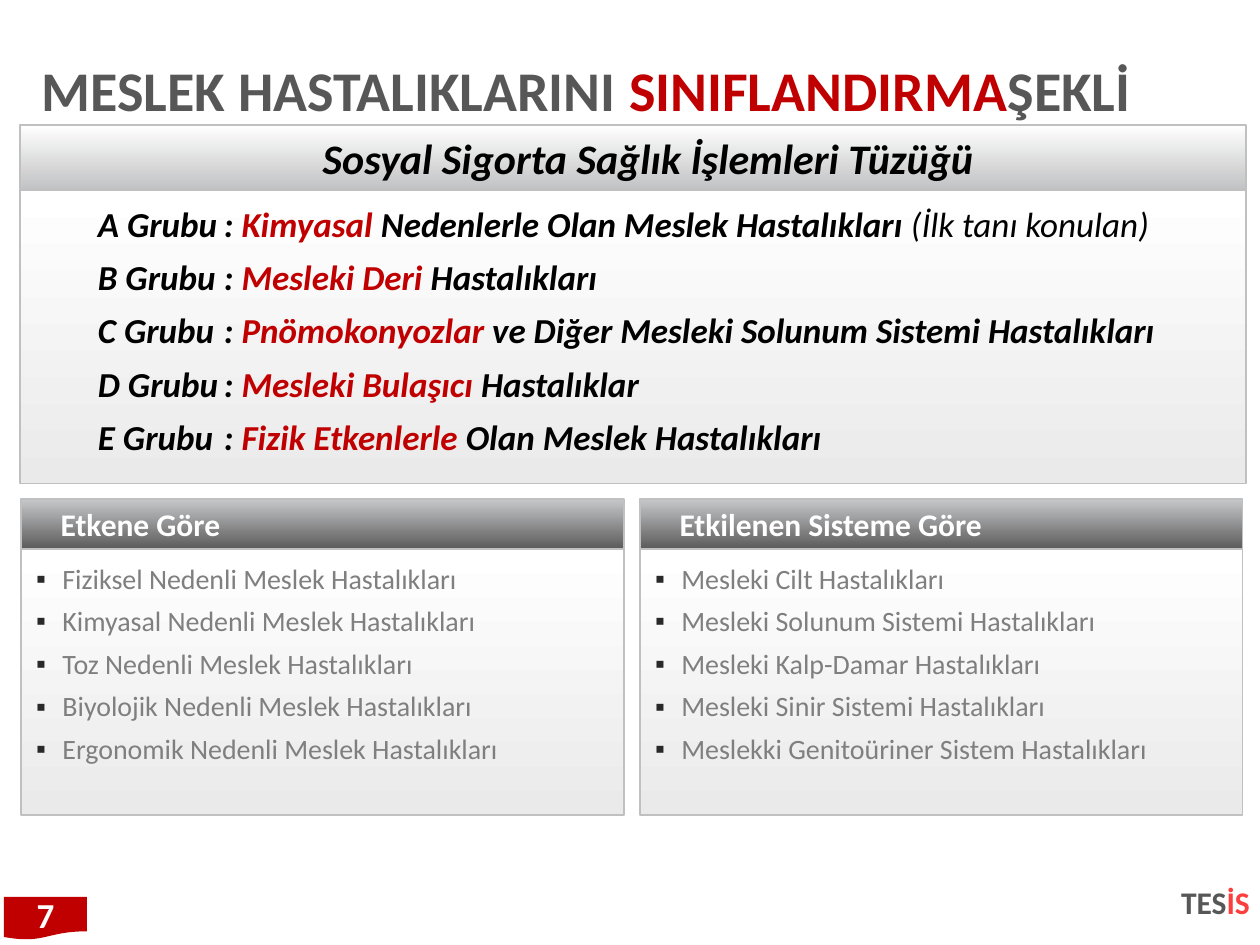
from dataclasses import dataclass

from lxml import etree
from pptx import Presentation
from pptx.dml.color import RGBColor
from pptx.enum.shapes import MSO_SHAPE
from pptx.enum.text import MSO_ANCHOR, MSO_AUTO_SIZE, PP_ALIGN
from pptx.oxml.ns import qn
from pptx.util import Pt

RECT, WAVE = MSO_SHAPE.RECTANGLE, MSO_SHAPE.FLOWCHART_DOCUMENT
TOP, MIDDLE = MSO_ANCHOR.TOP, MSO_ANCHOR.MIDDLE
LEFT, CENTER, RIGHT = PP_ALIGN.LEFT, PP_ALIGN.CENTER, PP_ALIGN.RIGHT
FIXED = MSO_AUTO_SIZE.NONE


@dataclass(frozen=True)
class Theme:
    font: str = "Calibri"
    dark: str = "575757"
    red: str = "C00000"
    coral: str = "FB3E3E"
    black: str = "000000"
    white: str = "FFFFFF"
    gray: str = "7F7F7F"
    mark: str = "292929"
    edge: str = "C0C0C0"
    steel: tuple = ("C6C7C8", "5C5C5D")
    silver: tuple = ("FFFFFF", "C1C2C3")
    pale: tuple = ("FFFFFF", "EAEAEA")
    title: int = 32
    head: int = 24
    group: int = 20
    label: int = 18
    item: int = 16


class Deck:
    """Holds the theme and the current slide, and draws each kind of element."""

    def __init__(self, theme):
        self.theme = theme
        self.file = Presentation()
        self.file.slide_width, self.file.slide_height = Pt(720), Pt(540)
        self.slide = self.file.slides.add_slide(self.file.slide_layouts[4])

    def holder(self, index, box):
        shape = self.slide.placeholders[index]
        shape.left, shape.top, shape.width, shape.height = map(Pt, box)
        return shape

    def shape(self, kind, box):
        shape = self.slide.shapes.add_shape(kind, *map(Pt, box))
        shape.shadow.inherit = False
        return shape

    def shade(self, shape, colors):
        shape.fill.gradient()
        shape.fill.gradient_angle = 270
        for stop, color in zip(shape.fill.gradient_stops, colors):
            stop.color.rgb = RGBColor.from_string(color)
        shape.line.color.rgb = RGBColor.from_string(self.theme.edge)
        shape.line.width = Pt(1)

    def text(self, shape, lines, size, color, bold=True, slant=False, align=LEFT,
             anchor=TOP, inset=(0, 0, 0, 0), space=1.0, after=0, indent=(0, 0),
             bullet=None):
        frame = shape.text_frame
        frame.word_wrap, frame.auto_size = True, FIXED
        frame.vertical_anchor = anchor
        (frame.margin_left, frame.margin_top,
         frame.margin_right, frame.margin_bottom) = map(Pt, inset)
        for n, line in enumerate(lines):
            para = frame.add_paragraph() if n else frame.paragraphs[0]
            para.alignment, para.line_spacing = align, space
            para.space_before, para.space_after = Pt(0), Pt(after)
            props = para._p.get_or_add_pPr()
            props.set("marL", str(Pt(indent[0])))
            props.set("indent", str(Pt(indent[1])))
            if bullet:
                tint = etree.SubElement(props, qn("a:buClr"))
                etree.SubElement(tint, qn("a:srgbClr"), val=self.theme.mark)
                etree.SubElement(props, qn("a:buChar"), char=bullet)
            font = para.font
            font.name, font.size = self.theme.font, Pt(size)
            font.bold, font.italic = bold, slant
            font.color.rgb = RGBColor.from_string(color)
            for words, *style in [(line,)] if isinstance(line, str) else line:
                run = para.add_run()
                run.text = words
                if style:
                    run.font.color.rgb = RGBColor.from_string(style[0])
                if style[1:]:
                    run.font.bold = style[1]

    def title(self, line):
        shape = self.holder(0, (23.8, 32.4, 671, 51))
        self.text(shape, [line], self.theme.title, self.theme.dark,
                  inset=(0, 3.6, 0, 3.6), space=0.9)

    def column(self, index, left, label, items):
        t, wide = self.theme, 344.2
        head = self.holder(index, (left, 285.3, wide, 28.3))
        self.shade(head, t.steel)
        self.text(head, [label], t.label, t.white, anchor=MIDDLE,
                  inset=(22.5, 0, 0, 0))
        body = self.holder(index + 1, (left, 313.6, wide, 152.2))
        self.shade(body, t.pale)
        self.text(body, items, t.item, t.gray, bold=False,
                  inset=(8.5, 8.5, 11.3, 5.7), space=0.95, after=6.1,
                  indent=(15, -15), bullet="▪")

    def panel(self, label, lines):
        t, left, wide = self.theme, 11.5, 700.6
        head = self.shape(RECT, (left, 71.3, wide, 37.4))
        self.shade(head, t.silver)
        self.text(head, [label], t.head, t.black, slant=True, align=CENTER,
                  anchor=MIDDLE, inset=(22.5, 0, 0, 0))
        body = self.shape(RECT, (left, 108.7, wide, 167.7))
        self.shade(body, t.pale)
        self.text(body, lines, t.group, t.black, slant=True,
                  inset=(8.5, 8.5, 11.3, 5.7), space=0.95, after=7.7,
                  indent=(36, 0))

    def badge(self, label):
        t = self.theme
        shape = self.shape(WAVE, (2.2, 512.6, 47.5, 24.5))
        shape.fill.solid()
        shape.fill.fore_color.rgb = RGBColor.from_string(t.red)
        shape.line.fill.background()
        self.text(shape, [label], t.group, t.white, align=CENTER, anchor=MIDDLE)

    def sign(self, line):
        box = self.slide.shapes.add_textbox(*map(Pt, (666.7, 504.7, 47.5, 40.3)))
        self.text(box, [line], self.theme.label, self.theme.dark, align=RIGHT)


def main():
    theme = Theme()
    deck = Deck(theme)
    red = theme.red
    deck.title([("MESLEK HASTALIKLARINI ",), ("SINIFLANDIRMA", red), ("ŞEKLİ",)])
    deck.column(1, 12.2, "Etkene Göre", [
        f"{cause} Nedenli Meslek Hastalıkları"
        for cause in ("Fiziksel", "Kimyasal", "Toz", "Biyolojik", "Ergonomik")])
    deck.column(3, 365.8, "Etkilenen Sisteme Göre", [
        "Mesleki Cilt Hastalıkları",
        "Mesleki Solunum Sistemi Hastalıkları",
        "Mesleki Kalp-Damar Hastalıkları",
        "Mesleki Sinir Sistemi Hastalıkları",
        "Meslekki Genitoüriner Sistem Hastalıkları"])
    groups = [
        ("A", "Kimyasal", " Nedenlerle Olan Meslek Hastalıkları "),
        ("B", "Mesleki Deri ", "Hastalıkları"),
        ("C", "Pnömokonyozlar", " ve Diğer Mesleki Solunum Sistemi Hastalıkları"),
        ("D", "Mesleki Bulaşıcı ", "Hastalıklar"),
        ("E", "Fizik Etkenlerle ", "Olan Meslek Hastalıkları")]
    lines = [[(f"{name} Grubu\t: ",), (cause, red), (rest,)]
             for name, cause, rest in groups]
    lines[0].append(("(İlk tanı konulan)", theme.black, False))
    deck.panel("Sosyal Sigorta Sağlık İşlemleri Tüzüğü ", lines)
    deck.sign([("TES",), ("İS", theme.coral)])
    deck.badge("7")
    deck.file.save("out.pptx")


if __name__ == "__main__":
    main()
